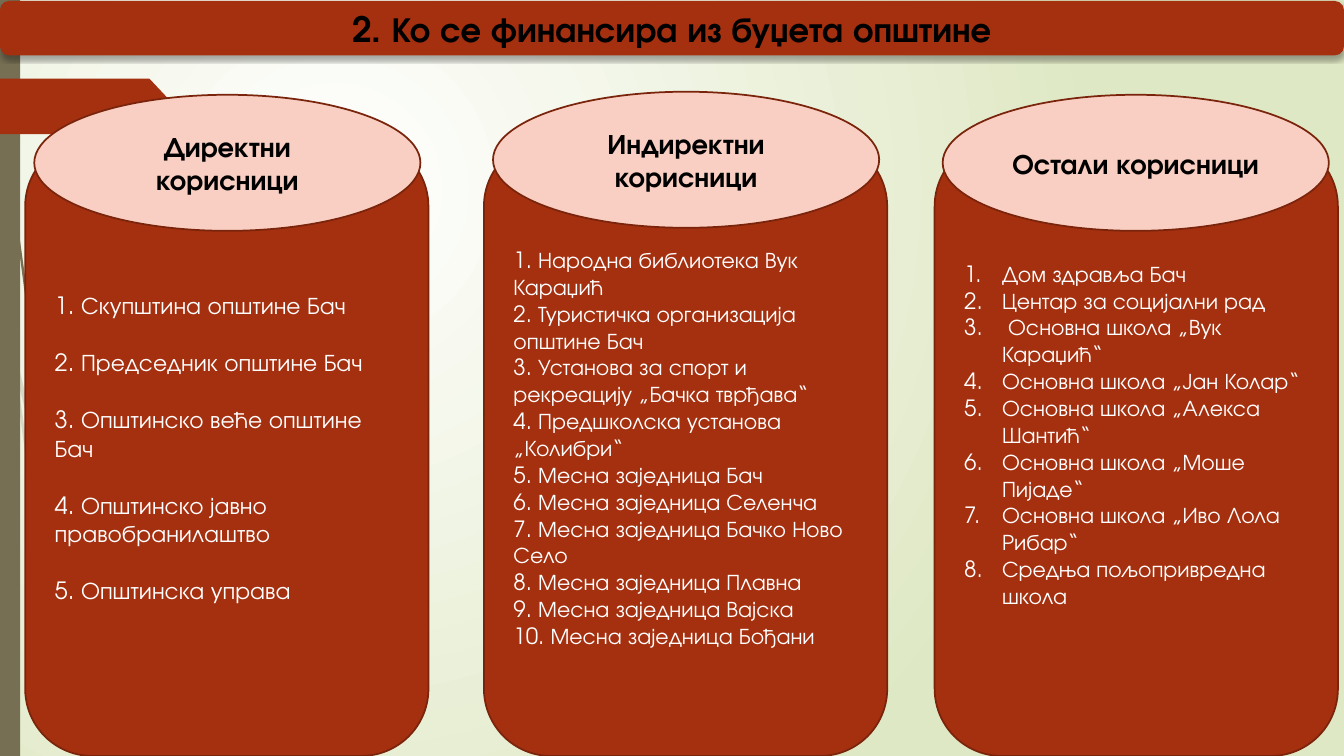
"""Build the slide on who is financed from the municipal budget."""
import pptx
import pptx.util
import pptx.dml.color
import pptx.enum.shapes
import pptx.enum.text
import pptx.oxml
import pptx.oxml.ns

Inches, Pt = pptx.util.Inches, pptx.util.Pt
RGB = pptx.dml.color.RGBColor.from_string
Kind = pptx.enum.shapes.MSO_SHAPE
Align = pptx.enum.text.PP_ALIGN
Tag = pptx.oxml.ns.qn
Space = pptx.oxml.ns.nsdecls("a")
FONT = "TeX Gyre Adventor"
COLORS = {"rust": "A53010", "edge": "7A240C", "rose": "F9CFC3", "olive": "766F54",
          "leaf": "DFE8C4", "white": "FFFFFF", "black": "000000"}


def paint(shape, fill, line=None):
    shape.shadow.inherit = False
    shape.fill.solid()
    shape.fill.fore_color.rgb = RGB(COLORS[fill])
    if line:
        shape.line.color.rgb = RGB(COLORS[line])
        shape.line.width = Pt(1.25)
    else:
        shape.line.fill.background()
    return shape


def write(shape, lines, size, color, align, bold=False, gap=0):
    frame = shape.text_frame
    frame.word_wrap = True
    frame.vertical_anchor = pptx.enum.text.MSO_ANCHOR.MIDDLE
    for i, line in enumerate(lines):
        para = frame.paragraphs[0] if i == 0 else frame.add_paragraph()
        para.alignment = align
        para.space_before = Pt(gap if i else 0)
        run = para.add_run()
        run.text = line
        run.font.name = FONT
        run.font.size = Pt(size)
        run.font.bold = bold
        run.font.color.rgb = RGB(COLORS[color])
    return frame


deck = pptx.Presentation()
deck.slide_width, deck.slide_height = Inches(13.33), Inches(7.5)
slide = deck.slides.add_slide(deck.slide_layouts[6])
shapes = slide.shapes

back = slide.background.fill
back.gradient()
for stop, name, place in zip(back.gradient_stops, ("white", "leaf"), (0, 1)):
    stop.color.rgb = RGB(COLORS[name])
    stop.position = place
lin = next(slide.background._cSld.iter(Tag("a:lin")))
lin.getparent().replace(lin, pptx.oxml.parse_xml(
    f'<a:path {Space} path="circle"><a:fillToRect l="50000" t="50000" '
    'r="100000" b="100000"/></a:path>'))

wisps = [
    (20, [(58, 522), (84, 599), (85, 586), (62, 520), (37, 440),
          (14, 345), (17, 376), (36, 450)]),
    (20, [(93, 683), (70, 619), (31, 469), (17, 376), (11, 350),
          (28, 470), (65, 621), (92, 693), (101, 714)]),
    (100, [(7, 110), (17, 233), (33, 355), (56, 477), (57, 481), (55, 453),
           (36, 355), (19, 232), (8, 109), (5, 48), (4, 0), (3, 0), (4, 48)]),
]
for alpha, dots in wisps:
    pen = shapes.build_freeform(*dots[0], scale=Inches(0.01))
    pen.add_line_segments(dots[1:], close=True)
    wisp = paint(pen.convert_to_shape(), "olive")
    tone = next(wisp._element.spPr.iter(Tag("a:srgbClr")))
    tone.append(pptx.oxml.parse_xml(f'<a:alpha {Space} val="{alpha * 1000}"/>'))

paint(shapes.add_shape(Kind.RECTANGLE, 0, 0, Inches(0.2), deck.slide_height), "olive")
arrow = shapes.add_shape(Kind.PENTAGON, 0, Inches(0.78), Inches(1.74), Inches(0.55))
arrow.adjustments[0] = 0.47
paint(arrow, "rust")

title = paint(shapes.add_shape(Kind.ROUNDED_RECTANGLE, 0, Inches(0.01),
                               deck.slide_width, Inches(0.54)), "rust")
write(title, ["2. Ко се финансира из буџета општине"], 25, "black", Align.CENTER, True)
title._element.spPr.find(Tag("a:effectLst")).append(pptx.oxml.parse_xml(
    f'<a:outerShdw {Space} blurRad="{Pt(3.5)}" dist="{Pt(2.2)}" dir="5400000" '
    'algn="t" rotWithShape="0"><a:srgbClr val="000000"><a:alpha val="32000"/>'
    '</a:srgbClr></a:outerShdw>'))

groups = [
    (0.25, 0.34, 0.94, "Директни корисници", 17, 20.4, False, [
        "1. Скупштина општине Бач",
        "2. Председник општине Бач",
        "3. Општинско веће општине Бач",
        "4. Општинско јавно правобранилаштво",
        "5. Општинска управа"]),
    (4.8, 4.89, 0.91, "Индиректни корисници", 16, 0, False, [
        "1. Народна библиотека Вук Караџић",
        "2. Туристичка организација општине Бач",
        "3. Установа за спорт и рекреацију „Бачка тврђава“",
        "4. Предшколска установа „Колибри“",
        "5. Месна заједница Бач",
        "6. Месна заједница Селенча",
        "7. Месна заједница Бачко Ново Село",
        "8. Месна заједница Плавна",
        "9. Месна заједница Вајска",
        "10. Месна заједница Бођани"]),
    (9.27, 9.35, 0.94, "Остали корисници", 16, 0, True, [
        "Дом здравља Бач",
        "Центар за социјални рад",
        " Основна школа „Вук Караџић“",
        "Основна школа „Јан Колар“",
        "Основна школа „Алекса Шантић“",
        "Основна школа „Моше Пијаде“",
        "Основна школа „Иво Лола Рибар“",
        "Средња пољопривредна школа"]),
]
for left, inner, top, head, size, gap, auto, items in groups:
    panel = paint(shapes.add_shape(Kind.ROUNDED_RECTANGLE, Inches(left), Inches(1.38),
                                   Inches(4), Inches(6.12)), "rust", "edge")
    frame = write(panel, items, size, "white", Align.LEFT, gap=gap)
    if auto:
        frame.margin_bottom = Inches(0.31)
        for para in frame.paragraphs:
            props = para._p.get_or_add_pPr()
            props.set("marL", str(Pt(27)))
            props.set("indent", str(-Pt(27)))
            props.append(pptx.oxml.parse_xml(
                f'<a:buAutoNum {Space} type="arabicPeriod"/>'))
    oval = paint(shapes.add_shape(Kind.OVAL, Inches(inner), Inches(top),
                                  Inches(3.83), Inches(1.35)), "rose", "edge")
    write(oval, [head], 20, "black", Align.CENTER, True)

deck.save("out.pptx")
